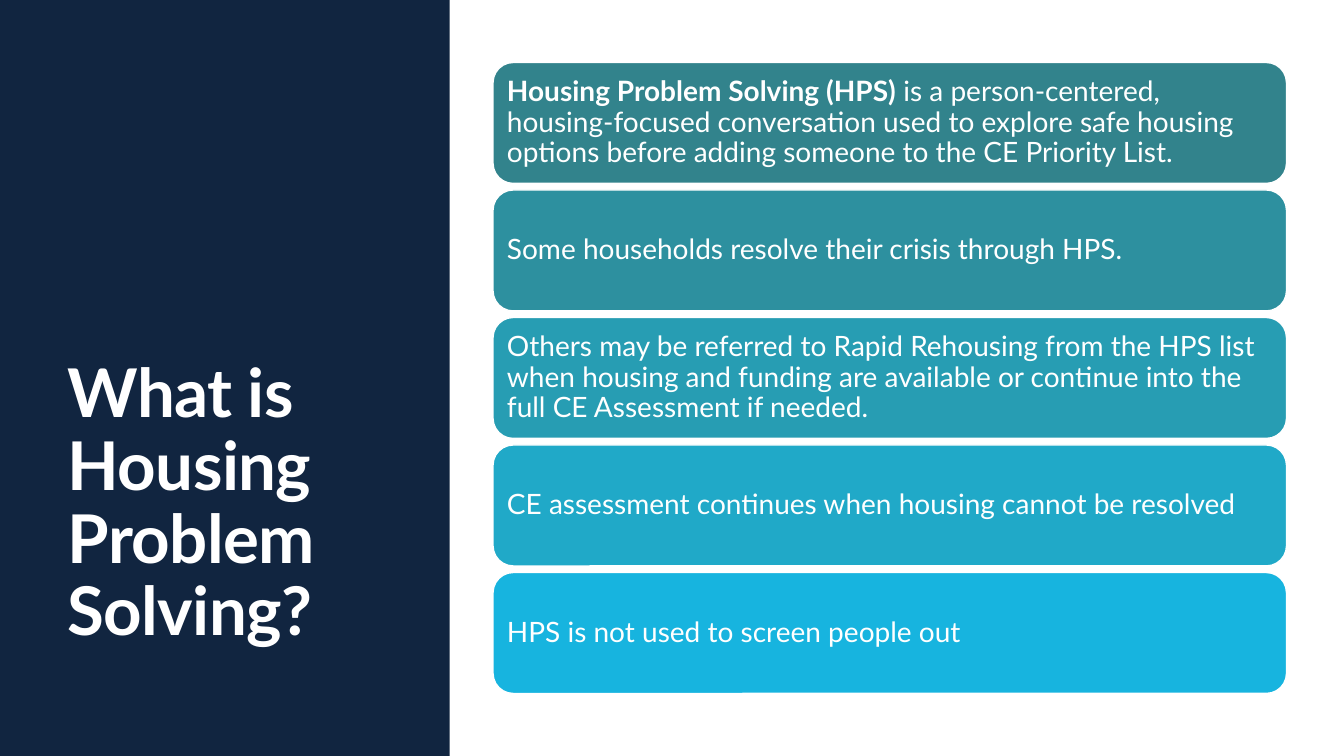
import pptx
import pptx.util
import pptx.dml.color
import pptx.enum.shapes
import pptx.enum.text
from pptx.util import Inches

RGBColor = pptx.dml.color.RGBColor
NAVY = RGBColor(0x11, 0x25, 0x40)
WHITE = RGBColor(0xFF, 0xFF, 0xFF)
CARD_FILLS = [
    RGBColor(0x32, 0x83, 0x8C),
    RGBColor(0x2D, 0x90, 0x9F),
    RGBColor(0x27, 0x9D, 0xB3),
    RGBColor(0x20, 0xA9, 0xC8),
    RGBColor(0x17, 0xB4, 0xDF),
]

# Each card: bold lead-in, remaining text
CARDS = [
    ("Housing Problem Solving (HPS)",
     " is a person-centered, housing-focused conversation used to explore "
     "safe housing options before adding someone to the CE Priority List."),
    ("", "Some households resolve their crisis through HPS."),
    ("", "Others may be referred to Rapid Rehousing from the HPS list when housing "
         "and funding are available or continue into the full CE Assessment if needed."),
    ("", "CE assessment continues when housing cannot be resolved"),
    ("", "HPS is not used to screen people out"),
]
CARD_TOP, CARD_STEP = 0.62, 1.265


class SlideBuilder:
    """Holds the text style and the current slide."""

    font = "Lato"
    title_size = pptx.util.Pt(48)
    card_size = pptx.util.Pt(20)
    line_spacing = 0.9

    def __init__(self, slide):
        self.s = slide

    def style_run(self, r, size, bold):
        r.font.name = self.font
        r.font.size = size
        r.font.bold = bold
        r.font.color.rgb = WHITE

    def shape(self, kind, left, top, width, height, fill):
        sp = self.s.shapes.add_shape(
            kind, Inches(left), Inches(top), Inches(width), Inches(height))
        sp.shadow.inherit = False
        sp.fill.solid()
        sp.fill.fore_color.rgb = fill
        return sp

    def panel(self, left, top, width, height, fill):
        sp = self.shape(pptx.enum.shapes.MSO_SHAPE.RECTANGLE,
                        left, top, width, height, fill)
        sp.line.fill.background()
        # Keep the panel behind the title
        self.s.shapes.title.element.addprevious(sp.element)

    def title(self, text, left, top, width, height):
        sp = self.s.shapes.title
        sp.left, sp.top = Inches(left), Inches(top)
        sp.width, sp.height = Inches(width), Inches(height)
        tf = sp.text_frame
        tf.text = text
        tf.word_wrap = True
        tf.auto_size = pptx.enum.text.MSO_AUTO_SIZE.NONE
        tf.vertical_anchor = pptx.enum.text.MSO_ANCHOR.BOTTOM
        p = tf.paragraphs[0]
        p.alignment = pptx.enum.text.PP_ALIGN.LEFT
        p.line_spacing = self.line_spacing
        r = p.runs[0]
        self.style_run(r, self.title_size, True)
        r._r.get_or_add_rPr().set("spc", "-40")

    def card(self, lead, text, left, top, width, height, fill):
        sp = self.shape(pptx.enum.shapes.MSO_SHAPE.ROUNDED_RECTANGLE,
                        left, top, width, height, fill)
        sp.line.color.rgb = WHITE
        sp.line.width = pptx.util.Pt(1)
        tf = sp.text_frame
        tf.word_wrap = True
        tf.vertical_anchor = pptx.enum.text.MSO_ANCHOR.MIDDLE
        tf.margin_left = tf.margin_right = Inches(0.08)
        tf.margin_top = tf.margin_bottom = Inches(0.08)
        p = tf.paragraphs[0]
        p.alignment = pptx.enum.text.PP_ALIGN.LEFT
        p.line_spacing = self.line_spacing
        for part, bold in ((lead, True), (text, False)):
            if part:
                r = p.add_run()
                r.text = part
                self.style_run(r, self.card_size, bold)


def main():
    prs = pptx.Presentation()
    prs.slide_width, prs.slide_height = Inches(13.33), Inches(7.5)
    b = SlideBuilder(prs.slides.add_slide(prs.slide_layouts[5]))

    # Left panel with the title
    b.panel(0, 0, 4.46, 7.5, NAVY)
    b.title("What is Housing Problem Solving?", 0.57, 0.51, 3.45, 5.99)

    # Column of cards
    for i, ((lead, text), fill) in enumerate(zip(CARDS, CARD_FILLS)):
        b.card(lead, text, 4.89, CARD_TOP + i * CARD_STEP, 7.87, 1.2, fill)

    prs.save("out.pptx")


if __name__ == "__main__":
    main()
